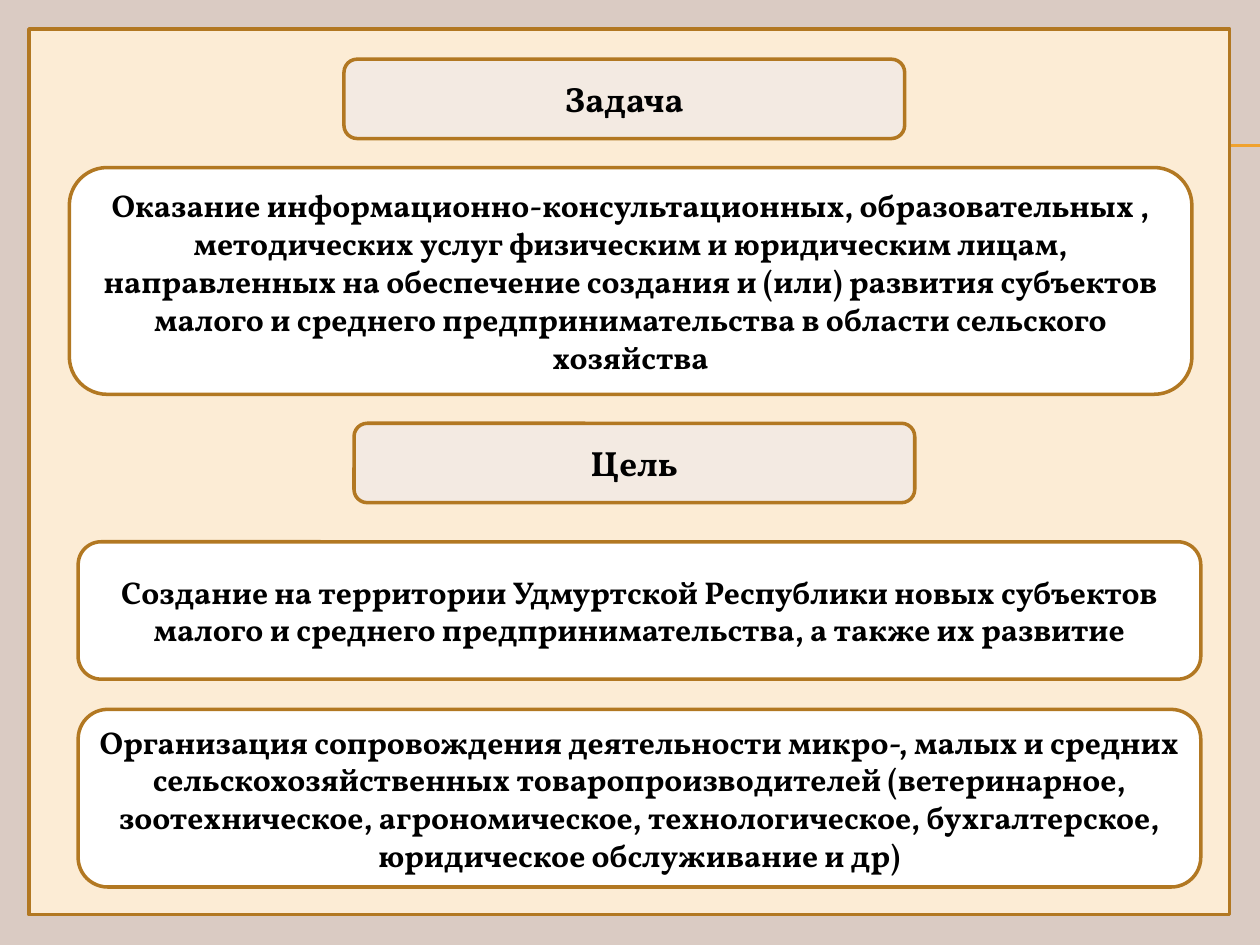
from pptx import Presentation
from pptx.dml.color import RGBColor
from pptx.enum.shapes import MSO_CONNECTOR, MSO_SHAPE as Shape
from pptx.enum.text import MSO_ANCHOR as Anchor, PP_ALIGN as Align
from pptx.oxml.ns import qn
from pptx.util import Inches, Pt

COLORS = {
    "background": "DACBC3",
    "rule": "F0A22E",
    "panel": "FCECD5",
    "border": "B27822",
    "heading": "F3EAE2",
    "body": "FFFFFF",
    "text": "000000",
}
HEADING_WIDTH, HEADING_HEIGHT = 4.45, 0.63
BODY_WIDTH = 8.91

HEADINGS = [  # left, top, text
    (2.73, 0.47, "Задача"),
    (2.81, 3.36, "Цель"),
]
STATEMENTS = [  # left, top, height, text
    (0.55, 1.33, 1.8,
     "Оказание информационно-консультационных, образовательных , "
     "методических услуг физическим и юридическим лицам, направленных на "
     "обеспечение создания и (или) развития субъектов малого и среднего "
     "предпринимательства в области сельского хозяйства"),
    (0.62, 4.3, 1.09,
     "Создание на территории Удмуртской Республики новых субъектов малого и "
     "среднего предпринимательства, а также их развитие"),
    (0.62, 5.63, 1.41,
     "Организация сопровождения деятельности микро-, малых и средних "
     "сельскохозяйственных товаропроизводителей (ветеринарное, "
     "зоотехническое, агрономическое, технологическое, бухгалтерское, "
     "юридическое обслуживание и др)"),
]


def color(name):
    return RGBColor.from_string(COLORS[name])


class SlideBuilder:
    """Holds the shared style and the slide being filled."""

    font = "Vollkorn"
    border_width = Pt(2)

    def __init__(self, slide):
        self.slide = slide

    def background(self, fill):
        paint = self.slide.background.fill
        paint.solid()
        paint.fore_color.rgb = color(fill)

    def rule(self, left, right, top):
        line = self.slide.shapes.add_connector(
            MSO_CONNECTOR.STRAIGHT,
            Inches(left), Inches(top), Inches(right), Inches(top))
        line.line.color.rgb = color("rule")
        line.line.width = Pt(0.75)
        properties = line._element.spPr
        properties.append(properties.makeelement(qn("a:effectLst"), {}))

    def frame(self, kind, left, top, width, height, fill):
        box = self.slide.shapes.add_shape(
            kind, Inches(left), Inches(top), Inches(width), Inches(height))
        box.shadow.inherit = False
        box.fill.solid()
        box.fill.fore_color.rgb = color(fill)
        box.line.color.rgb = color("border")
        box.line.width = self.border_width
        return box

    def card(self, left, top, width, height, fill, text, size):
        box = self.frame(Shape.ROUNDED_RECTANGLE, left, top, width, height, fill)
        frame = box.text_frame
        frame.word_wrap = True
        frame.vertical_anchor = Anchor.MIDDLE
        frame.text = text
        para = frame.paragraphs[0]
        para.alignment = Align.CENTER
        font = para.runs[0].font
        font.name = self.font
        font.size = Pt(size)
        font.bold = True
        font.color.rgb = color("text")


def main():
    deck = Presentation()
    deck.slide_width, deck.slide_height = Inches(10), Inches(7.5)
    page = SlideBuilder(deck.slides.add_slide(deck.slide_layouts[6]))

    page.background("background")
    for top in (1.15, 1.16):
        page.rule(0.56, 10, top)
    page.frame(Shape.RECTANGLE, 0.23, 0.23, 9.53, 7.03, "panel")
    for left, top, text in HEADINGS:
        page.card(left, top, HEADING_WIDTH, HEADING_HEIGHT, "heading", text, 20)
    for left, top, height, text in STATEMENTS:
        page.card(left, top, BODY_WIDTH, height, "body", text, 18)

    deck.save("out.pptx")


if __name__ == "__main__":
    main()
